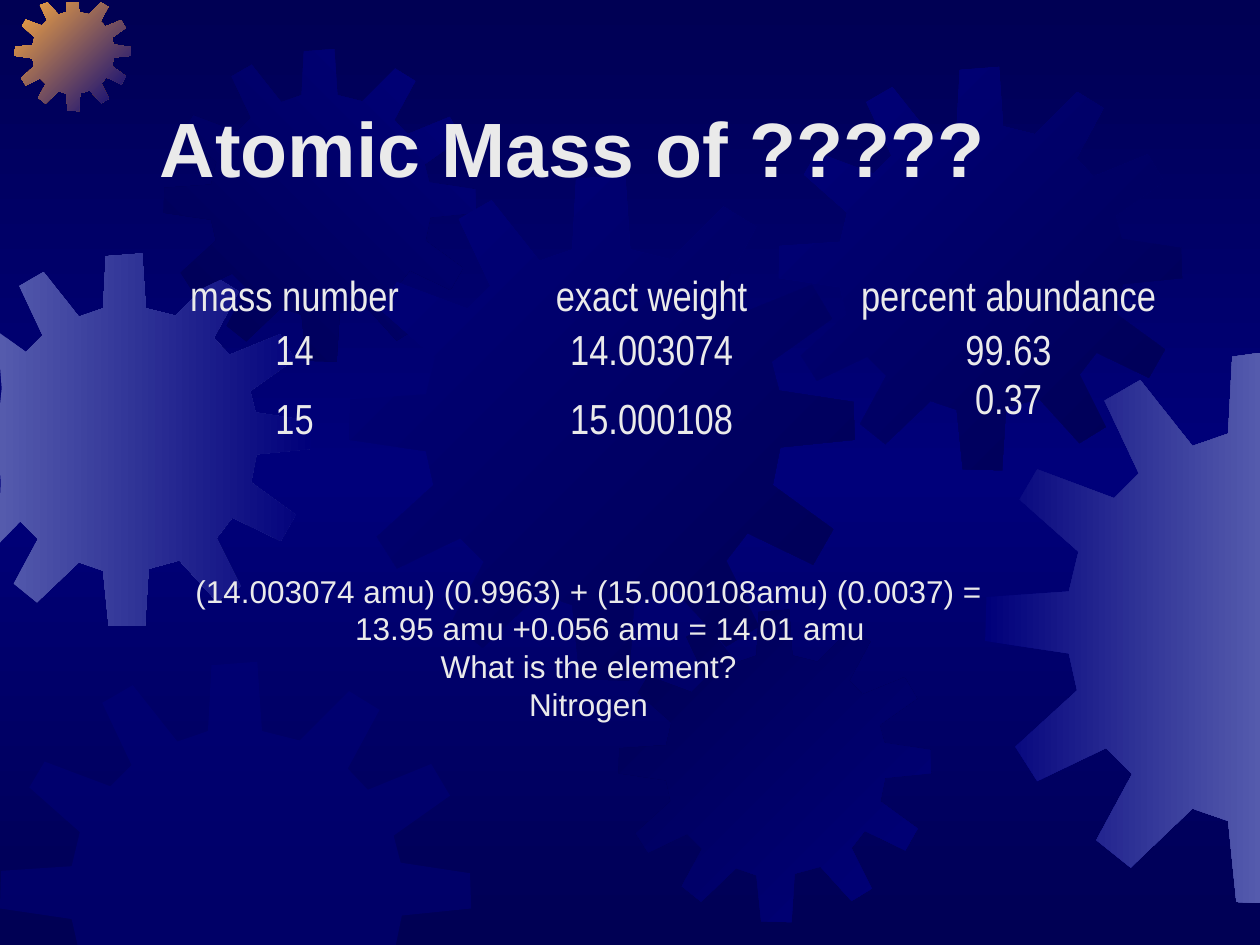
"""Build the atomic mass slide: gear backdrop, title, isotope table and worked sum."""
import copy

import pptx
import pptx.dml.color
import pptx.enum.text
import pptx.oxml.ns
import pptx.util
from lxml import etree

Cm = pptx.util.Cm
ALIGN = pptx.enum.text.PP_ALIGN
ANCHOR = pptx.enum.text.MSO_ANCHOR
qn = pptx.oxml.ns.qn

NAVY, BLUE, PALE, ORANGE = "000054", "00007A", "555BAD", "FCAB40"
NO_TABLE_STYLE = "{2D5ABB26-0587-4C30-8999-92F81FD0307C}"


def color(value):
    """Turn a hex string into a colour."""
    return pptx.dml.color.RGBColor.from_string(value)


def write(text_frame, text, size=18, font="Arial", bold=False, align=ALIGN.LEFT, anchor=ANCHOR.TOP):
    """Fill a text frame with one paragraph per line of text."""
    text_frame.word_wrap = True
    text_frame.vertical_anchor = anchor
    text_frame.text = text
    for paragraph in text_frame.paragraphs:
        paragraph.alignment = align
        paragraph.font.size = pptx.util.Pt(size)
        paragraph.font.name = font
        paragraph.font.bold = bold
        paragraph.font.color.rgb = color("EAEAEA")


presentation = pptx.Presentation()
presentation.slide_width = Cm(25.4)
presentation.slide_height = Cm(19.05)
slide = presentation.slides.add_slide(presentation.slide_layouts[6])

background = slide.background.fill
background.gradient()
background.gradient_angle = 270
first_stop, middle_stop = background.gradient_stops
first_stop.color.rgb = color(NAVY)
middle_stop.color.rgb = color(BLUE)
middle_stop.position = 0.5
stop_list = next(slide.element.iter(qn("a:gsLst")))
last_stop = copy.deepcopy(stop_list[0])
last_stop.set("pos", "100000")
stop_list.append(last_stop)

GEAR_GRID = 401
GEAR_OUTLINE = [
    (255, 67), (223, 59), (219, 0), (180, 3), (177, 59), (151, 68), (113, 20), (87, 35),
    (112, 88), (94, 106), (38, 85), (25, 107), (68, 145), (61, 174), (1, 178), (0, 210),
    (61, 219), (67, 246), (22, 287), (38, 312), (88, 288), (107, 307), (81, 355), (106, 375),
    (151, 332), (177, 341), (183, 400), (222, 401), (226, 339), (259, 330), (299, 374), (325, 358),
    (299, 306), (316, 284), (368, 309), (384, 281), (336, 246), (342, 216), (401, 210), (400, 180),
    (341, 171), (335, 148), (383, 114), (367, 87), (313, 109), (296, 91), (323, 41), (297, 25),
]
LEFT_EDGE, RIGHT_EDGE, TOP_EDGE, BOTTOM_EDGE = -0.02, 25.43, 0.05, 19.15

gears = [
    (-1.24, 5.11, 7.52, PALE, BLUE, 0),
    (0.3, -0.1, 2.34, ORANGE, BLUE, 315),
    (3.3, 0.99, 6.3, NAVY, BLUE, 45),
    (7.04, 3.53, 10.19, BLUE, NAVY, 315),
    (0, 13.34, 9.5, BLUE, None, None),
    (12.47, 12.29, 6.3, NAVY, BLUE, 315),
    (15.7, 1.35, 8.13, BLUE, NAVY, 315),
    (19.86, 7.11, 11.1, BLUE, PALE, 0),
]
for left, top, size, start_color, end_color, angle in gears:
    scale = size / GEAR_GRID
    points = [
        (
            Cm(min(max(left + x * scale, LEFT_EDGE), RIGHT_EDGE)),
            Cm(min(max(top + y * scale, TOP_EDGE), BOTTOM_EDGE)),
        )
        for x, y in GEAR_OUTLINE
    ]
    builder = slide.shapes.build_freeform(*points[0])
    builder.add_line_segments(points[1:], close=True)
    gear = builder.convert_to_shape()
    gear.shadow.inherit = False
    gear.line.fill.background()
    if end_color:
        gear.fill.gradient()
        gear.fill.gradient_angle = angle
        for stop, stop_color in zip(gear.fill.gradient_stops, (start_color, end_color)):
            stop.color.rgb = color(stop_color)
    else:
        gear.fill.solid()
        gear.fill.fore_color.rgb = color(start_color)
        solid_color = next(gear.element.spPr.iter(qn("a:srgbClr")))
        etree.SubElement(solid_color, qn("a:alpha")).set("val", "50000")

title = slide.shapes.add_textbox(Cm(2.97), Cm(0.84), Cm(21.59), Cm(3.18))
write(title.text_frame, "Atomic Mass of ?????", size=44, bold=True, anchor=ANCHOR.BOTTOM)

isotopes = [
    ("mass number", "exact weight", "percent abundance"),
    ("14", "14.003074", "99.63"),
    ("15", "15.000108", "0.37"),
]
row_heights = [1.06, 1.06, 1.69]
table_frame = slide.shapes.add_table(3, 3, Cm(2.34), Cm(5.51), Cm(21.59), Cm(sum(row_heights)))
next(table_frame.element.iter(qn("a:tableStyleId"))).text = NO_TABLE_STYLE
table = table_frame.table
table.first_row = False
table.horz_banding = False
for row, height, values in zip(table.rows, row_heights, isotopes):
    row.height = Cm(height)
    for cell, value in zip(row.cells, values):
        cell.fill.background()
        cell.margin_top = cell.margin_bottom = Cm(0.04)
        write(cell.text_frame, value, size=24, font="Arial Narrow", align=ALIGN.CENTER)
        cell.vertical_anchor = ANCHOR.TOP if value == "0.37" else ANCHOR.MIDDLE

calculation = slide.shapes.add_textbox(Cm(2.34), Cm(11.4), Cm(19.05), Cm(3.33))
write(
    calculation.text_frame,
    "(14.003074 amu) (0.9963) + (15.000108amu) (0.0037) =\n"
    "13.95 amu +0.056 amu = 14.01 amu\n"
    "What is the element?\n"
    "Nitrogen",
    align=ALIGN.CENTER,
)
result_properties = list(calculation.element.iter(qn("a:pPr")))[1]
result_properties.set("marL", str(Cm(0.86)))
result_properties.set("indent", "0")

presentation.save("out.pptx")
